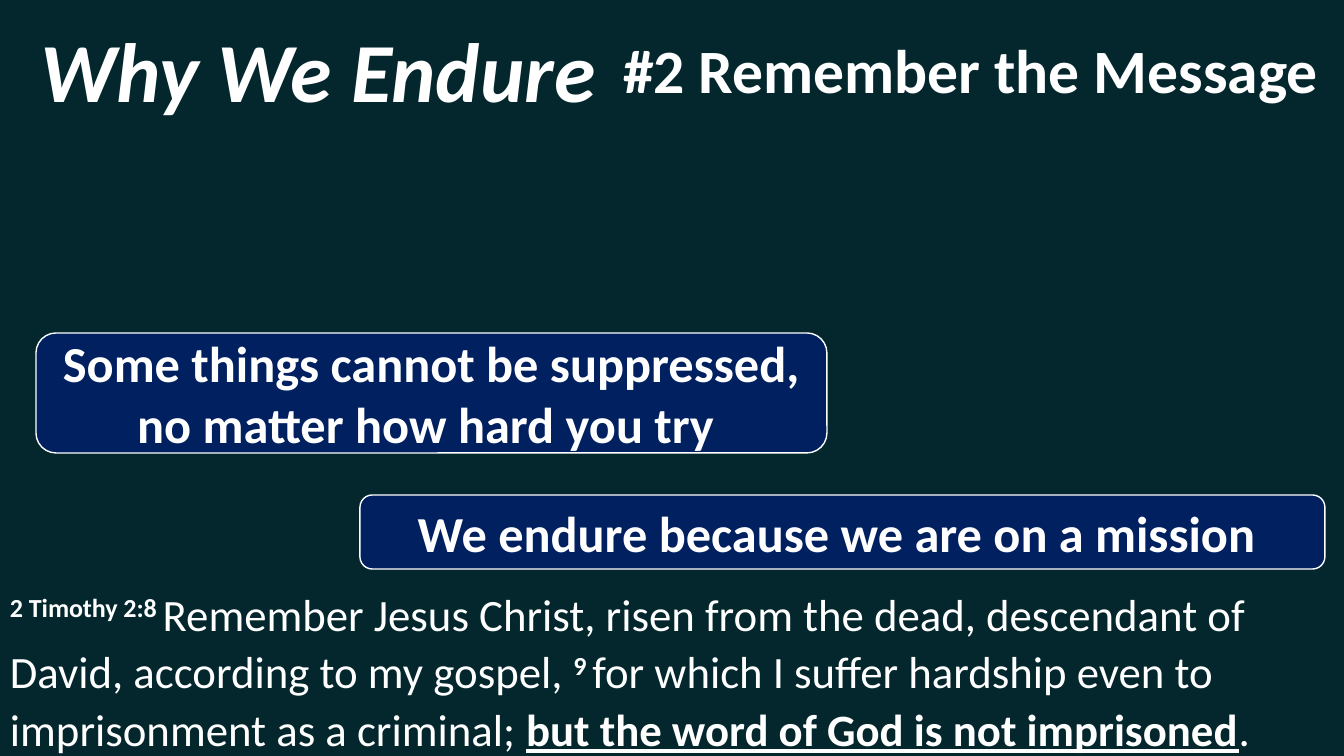
from pptx import Presentation
from pptx.dml.color import RGBColor
from pptx.enum.shapes import MSO_SHAPE as SHAPE
from pptx.enum.text import MSO_ANCHOR as ANCHOR, MSO_AUTO_SIZE as AUTO_SIZE, PP_ALIGN as ALIGN
from pptx.util import Emu, Pt

EMU_PER_PX = 914400 / 100.8
BACKGROUND, NAVY, WHITE = "03272D", "002060", "FFFFFF"

VERSE = [
    ("2 Timothy 2:8 ", "bold super"),
    ("Remember Jesus Christ, risen from the dead, descendant of David, "
     "according to my gospel, ", ""),
    ("9 ", "bold super"),
    ("for which I suffer hardship even to imprisonment as a criminal; ", ""),
    ("but the word of God is not imprisoned", "bold underline"),
    (".", ""),
]


def px(n):
    return Emu(round(n * EMU_PER_PX))


def rgb(color):
    return RGBColor.from_string(color)


def format_run(r, size, bold=True, italic=False):
    r.font.name = "Calibri"
    r.font.size = Pt(size)
    r.font.bold = bold
    r.font.italic = italic
    r.font.color.rgb = rgb(WHITE)


def set_line(sp, text, size, italic=False):
    """Put one centred bold line of text in a shape."""
    tf = sp.text_frame
    tf.word_wrap = True
    tf.text = text
    p = tf.paragraphs[0]
    p.alignment = ALIGN.CENTER
    format_run(p.runs[0], size, italic=italic)


def add_title(s, text, *box):
    sp = s.shapes.title
    sp.left, sp.top, sp.width, sp.height = map(px, box)
    set_line(sp, text, 60, italic=True)
    sp.text_frame.auto_size = AUTO_SIZE.NONE
    sp.text_frame.vertical_anchor = ANCHOR.TOP


def add_subtitle(s, text, *box):
    set_line(s.shapes.add_textbox(*map(px, box)), text, 44)


def add_panel(s, kind, fill, *box):
    sp = s.shapes.add_shape(kind, *map(px, box))
    sp.shadow.inherit = False
    sp.fill.solid()
    sp.fill.fore_color.rgb = rgb(fill)
    sp.text_frame.vertical_anchor = ANCHOR.MIDDLE
    return sp


def add_callout(s, text, *box):
    sp = add_panel(s, SHAPE.ROUNDED_RECTANGLE, NAVY, *box)
    sp.line.color.rgb = rgb(WHITE)
    sp.line.width = Pt(1)
    set_line(sp, text, 36)


def add_verse(s, parts, *box):
    sp = add_panel(s, SHAPE.RECTANGLE, BACKGROUND, *box)
    sp.line.fill.background()
    sp.text_frame.word_wrap = True
    p = sp.text_frame.paragraphs[0]
    p.alignment = ALIGN.LEFT
    p.line_spacing = 1.07
    for text, style in parts:
        r = p.add_run()
        r.text = text
        format_run(r, 32, bold="bold" in style)
        r.font.underline = "underline" in style
        if "super" in style:
            r.font._element.set("baseline", "30000")


def main():
    prs = Presentation()
    prs.slide_width, prs.slide_height = px(1344), px(756)
    s = prs.slides.add_slide(prs.slide_layouts[5])
    s.background.fill.solid()
    s.background.fill.fore_color.rgb = rgb(BACKGROUND)

    add_title(s, "Why We Endure", 0, 13, 636, 112)
    add_subtitle(s, "#2 Remember the Message", 597, 27, 748, 85)
    add_verse(s, VERSE, 0, 582, 1344, 174)
    add_callout(s, "We endure because we are on a mission ", 360, 495, 965, 74)
    add_callout(s, "Some things cannot be suppressed, no matter how hard you try ",
                36, 333, 791, 120)
    prs.save("out.pptx")


if __name__ == "__main__":
    main()
